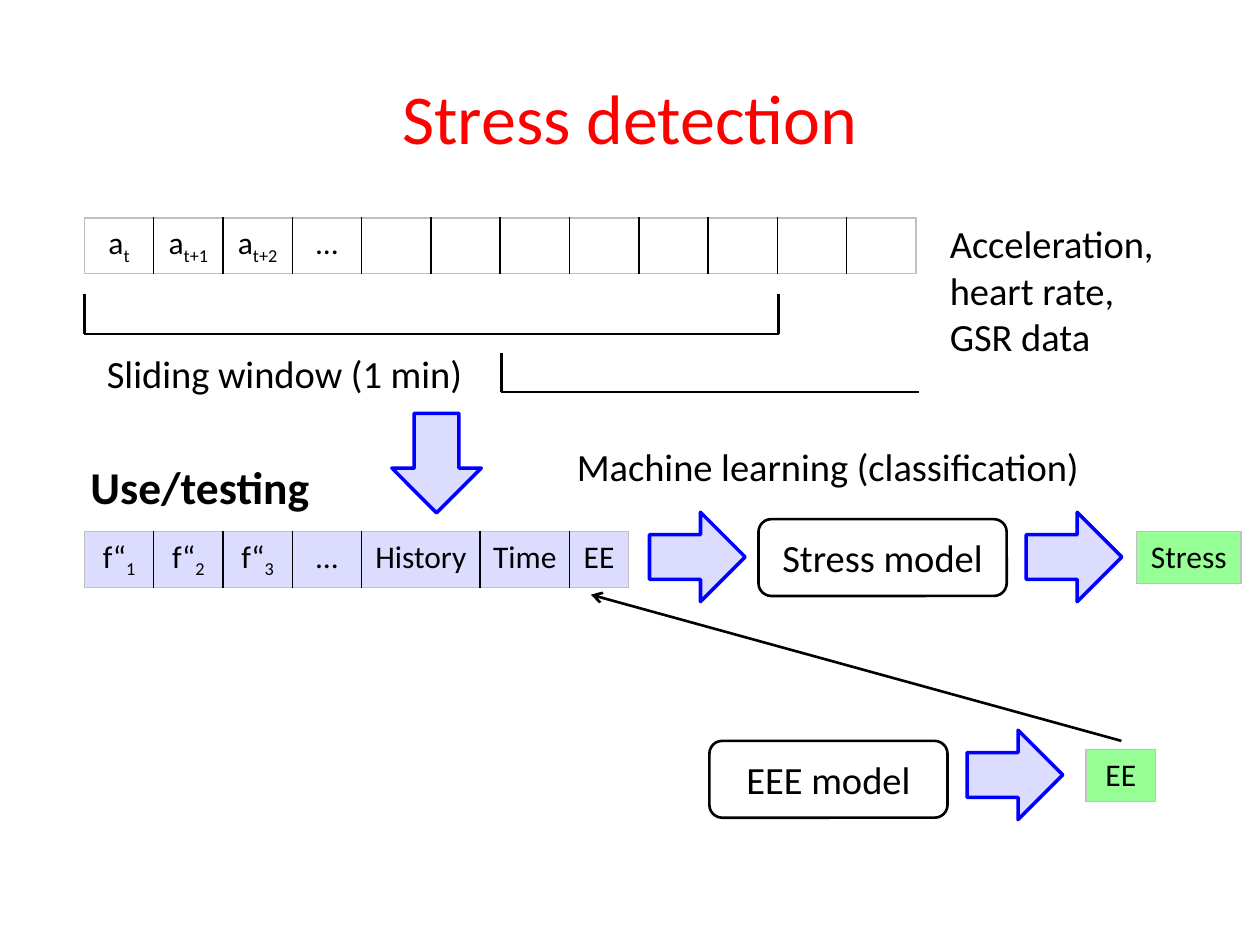
"""Build the stress detection slide."""
from dataclasses import dataclass
from typing import Optional

from lxml.etree import SubElement
from pptx import Presentation
from pptx.dml.color import RGBColor
from pptx.enum.shapes import MSO_CONNECTOR as Link, MSO_SHAPE as Form
from pptx.enum.text import MSO_ANCHOR as Anchor, MSO_AUTO_SIZE as Fit, PP_ALIGN as Align
from pptx.oxml import parse_xml
from pptx.oxml.ns import nsdecls, qn
from pptx.util import Inches, Pt

BLACK, RED, BLUE, GREY = "000000", "FF0000", "0000FF", "C0C0C0"
LILAC, GREEN = "DCDCFF", "96FF96"
STEP = 0.55


@dataclass
class Label:
    text: str
    left: float
    top: float
    width: float
    height: float
    size: int = 22
    bold: bool = False


@dataclass
class Grid:
    left: float
    top: float
    widths: list[float]
    cells: list[tuple[str, str]]
    fill: Optional[str] = None


@dataclass
class Model:
    text: str
    left: float
    top: float
    width: float


@dataclass
class Arrow:
    left: float
    top: float
    height: float = 0.76
    turn: int = 270


@dataclass
class Line:
    start: tuple[float, float]
    end: tuple[float, float]
    head: bool = False


LABELS = [
    Label("Acceleration,\nheart rate,\nGSR data", 7.44, 1.7, 1.84, 1.21),
    Label("Sliding window (1 min)", 0.75, 2.73, 3.05, 0.47),
    Label("Machine learning (classification)", 4.48, 3.47, 4.23, 0.47),
    Label("Use/testing", 0.62, 3.59, 1.96, 0.54, 26, True),
]
GRIDS = [
    Grid(0.67, 1.73, [STEP] * 12,
         [("a", "t"), ("a", "t+1"), ("a", "t+2"), ("...", "")] + [("", "")] * 8),
    Grid(0.67, 4.22, [STEP] * 4 + [0.94, 0.71, 0.47],
         [("f“", "1"), ("f“", "2"), ("f“", "3"), ("...", ""),
          ("History", ""), ("Time", ""), ("EE", "")], LILAC),
    Grid(8.62, 5.95, [STEP], [("EE", "")], GREEN),
    Grid(9.02, 4.22, [0.83], [("Stress", "")], GREEN),
]
MODELS = [Model("EEE model", 5.63, 5.88, 1.89), Model("Stress model", 6.02, 4.12, 1.97)]
ARROWS = [Arrow(7.7, 5.77), Arrow(5.18, 4.04), Arrow(8.17, 4.04), Arrow(3.11, 3.28, 0.79, 0)]
LINES = [
    Line((0.67, 2.33), (0.67, 2.65)),
    Line((6.18, 2.33), (6.18, 2.65)),
    Line((6.18, 2.65), (0.67, 2.65)),
    Line((3.98, 2.8), (3.98, 3.11)),
    Line((7.29, 3.11), (3.98, 3.11)),
    Line((8.9, 5.88), (4.69, 4.72), True),
]


def paint(target, code: str) -> None:
    """Give a fill or line a solid colour."""
    target.solid()
    target.fore_color.rgb = RGBColor.from_string(code)


def write(para, text: str, size: int, color: str = BLACK, bold: bool = False, base: int = 0) -> None:
    """Add one run to a paragraph."""
    run = para.add_run()
    run.text = text
    font = run.font
    font.name, font.size, font.bold = "Calibri", Pt(size), bold
    paint(font.fill, color)
    if base:
        run._r.get_or_add_rPr().set("baseline", str(base * 1000))


def add_title(slide, text: str) -> None:
    """Draw the centred title."""
    box = slide.shapes.add_textbox(Inches(0.5), Inches(0.3), Inches(9), Inches(1.25))
    frame = box.text_frame
    frame.word_wrap = True
    frame.vertical_anchor = Anchor.MIDDLE
    para = frame.paragraphs[0]
    para.alignment = Align.CENTER
    write(para, text, 40, RED)


def add_label(slide, label: Label) -> None:
    """Draw a free text label, one run per line."""
    box = slide.shapes.add_textbox(Inches(label.left), Inches(label.top),
                                   Inches(label.width), Inches(label.height))
    frame = box.text_frame
    frame.word_wrap = False
    frame.auto_size = Fit.SHAPE_TO_FIT_TEXT
    para = frame.paragraphs[0]
    for row, text in enumerate(label.text.split("\n")):
        if row:
            para.add_line_break()
        write(para, text, label.size, bold=label.bold)


def edge(cell, first: bool, last: bool) -> None:
    """Border a cell with grey outer and black inner lines."""
    colors = {"L": GREY if first else BLACK, "R": GREY if last else BLACK, "T": GREY, "B": GREY}
    props = cell._tc.get_or_add_tcPr()
    for spot, (side, code) in enumerate(colors.items()):
        props.insert(spot, parse_xml(
            f'<a:ln{side} {nsdecls("a")} w="{Pt(1)}"><a:solidFill>'
            f'<a:srgbClr val="{code}"/></a:solidFill></a:ln{side}>'))


def add_grid(slide, grid: Grid) -> None:
    """Draw a table of one row."""
    count = len(grid.widths)
    frame = slide.shapes.add_table(1, count, Inches(grid.left), Inches(grid.top),
                                   Inches(sum(grid.widths)), Inches(0.41))
    table = frame.table
    table.first_row = table.horz_banding = False
    for col, (width, (text, sub)) in enumerate(zip(grid.widths, grid.cells)):
        table.columns[col].width = Inches(width)
        cell = table.cell(0, col)
        cell.margin_left = cell.margin_right = Inches(0.05)
        if grid.fill:
            paint(cell.fill, grid.fill)
        else:
            cell.fill.background()
        edge(cell, col == 0, col == count - 1)
        para = cell.text_frame.paragraphs[0]
        para.alignment = Align.CENTER
        if text:
            write(para, text, 18)
        if sub:
            write(para, sub, 18, base=-25)


def add_model(slide, model: Model) -> None:
    """Draw a rounded model box."""
    box = slide.shapes.add_shape(Form.ROUNDED_RECTANGLE, Inches(model.left), Inches(model.top),
                                 Inches(model.width), Inches(0.61))
    box.shadow.inherit = False
    box.fill.background()
    paint(box.line.fill, BLACK)
    box.line.width = Pt(1.5)
    frame = box.text_frame
    frame.word_wrap = False
    frame.vertical_anchor = Anchor.MIDDLE
    para = frame.paragraphs[0]
    para.alignment = Align.CENTER
    write(para, model.text, 22)


def add_arrow(slide, arrow: Arrow) -> None:
    """Draw a block arrow."""
    shape = slide.shapes.add_shape(Form.DOWN_ARROW, Inches(arrow.left), Inches(arrow.top),
                                   Inches(0.71), Inches(arrow.height))
    shape.rotation = arrow.turn
    shape.shadow.inherit = False
    paint(shape.fill, LILAC)
    paint(shape.line.fill, BLUE)
    shape.line.width = Pt(2)


def add_line(slide, line: Line) -> None:
    """Draw a straight line, with an arrowhead if asked."""
    ends = [Inches(value) for value in line.start + line.end]
    link = slide.shapes.add_connector(Link.STRAIGHT, *ends)
    paint(link.line.fill, BLACK)
    link.line.width = Pt(1.5)
    if line.head:
        SubElement(link.line._get_or_add_ln(), qn("a:tailEnd"), type="arrow")
    SubElement(link._element.spPr, qn("a:effectLst"))


def main() -> None:
    """Build and save the slide."""
    deck = Presentation()
    deck.slide_width, deck.slide_height = Inches(10), Inches(7.5)
    slide = deck.slides.add_slide(deck.slide_layouts[6])
    add_title(slide, "Stress detection")
    for draw, items in ((add_grid, GRIDS), (add_label, LABELS), (add_model, MODELS),
                        (add_arrow, ARROWS), (add_line, LINES)):
        for item in items:
            draw(slide, item)
    deck.save("out.pptx")


if __name__ == "__main__":
    main()
